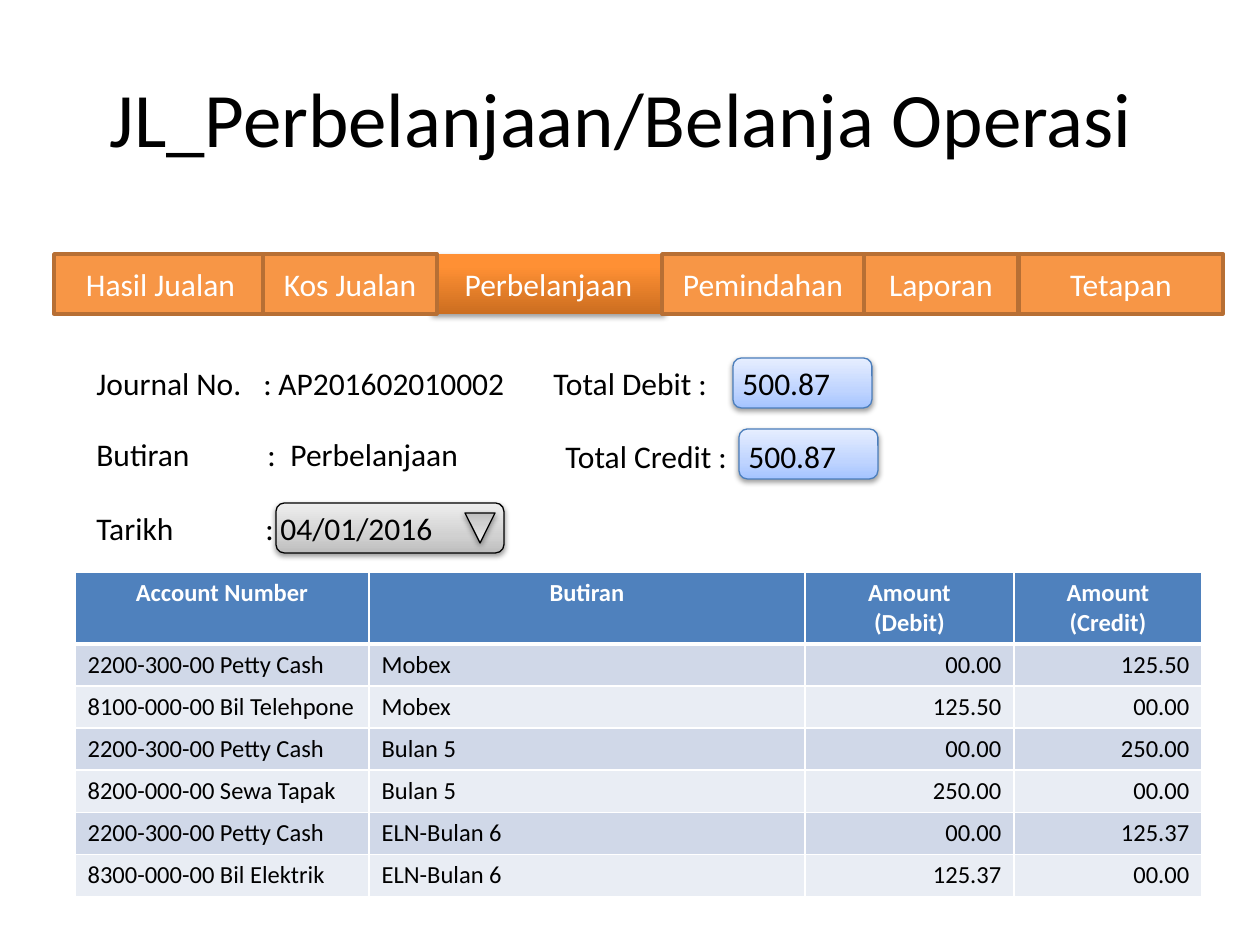
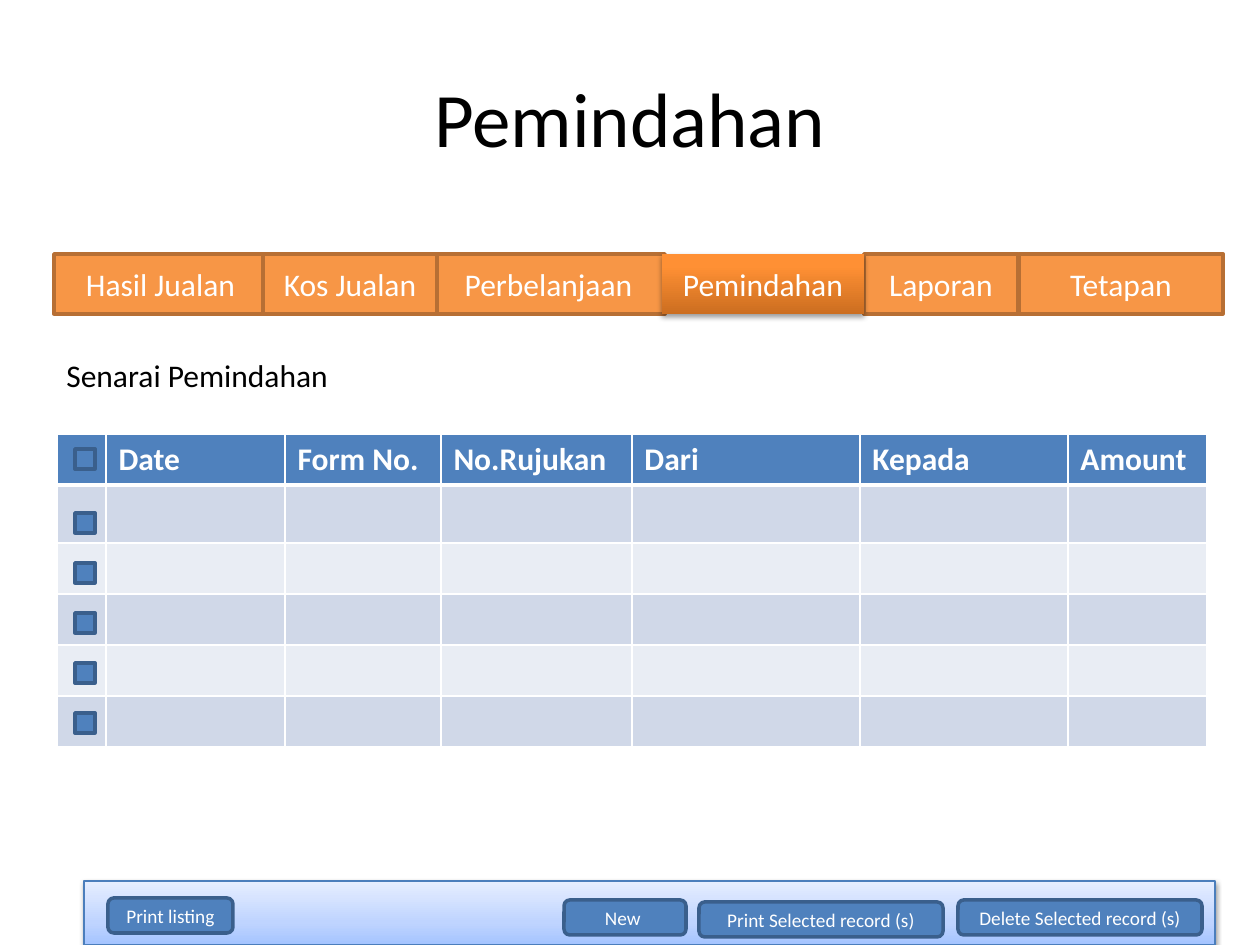
import pptx
import pptx.util
import pptx.dml.color
import pptx.enum.shapes
import pptx.enum.text
import pptx.oxml.ns
from dataclasses import dataclass
from lxml import etree

SHAPE = pptx.enum.shapes.MSO_SHAPE
ALIGN = pptx.enum.text.PP_ALIGN
ANCHOR = pptx.enum.text.MSO_ANCHOR
LEFT, CENTER, RIGHT = ALIGN.LEFT, ALIGN.CENTER, ALIGN.RIGHT
qn = pptx.oxml.ns.qn
PX = 914400 / 126


@dataclass(frozen=True)
class Theme:
    """Colours, gradients and type sizes shared by the slides."""
    font: str = "Calibri"
    title: int = 44
    body: int = 18
    cell: int = 14
    button: int = 11
    black: str = "000000"
    white: str = "FFFFFF"
    blue: str = "4F81BD"
    blue_edge: str = "3A5F8C"
    orange: str = "F79646"
    orange_edge: str = "B76F34"
    pale_edge: str = "4B7EBC"
    bands: tuple = ("D0D8E8", "E9EDF4")
    pale_blue: tuple = ((0, "A4C4FF"), (35, "BFD4FF"), (100, "E6EEFF"))
    grey: tuple = ((0, "BDBDBD"), (35, "D1D1D1"), (100, "EEEEEE"))
    active: tuple = ((0, "CC6E20"), (80, "FF9034"), (100, "FF9136"))


T = Theme()
TABS = [("Hasil Jualan", 0, 213), ("Perbelanjaan", 378, 233), ("Laporan", 810, 154),
        ("Tetapan", 965, 204), ("Pemindahan", 608, 202), ("Kos Jualan", 209, 174)]
BUTTONS = [("Delete Selected record (s)", 874, 19, 244), ("Print listing", 24, 17, 125),
           ("Print Selected record (s)", 615, 21, 244), ("New ", 480, 19, 122)]
JOURNAL = [
    ("Account Number", "Butiran", "Amount\n(Debit)", "Amount\n(Credit)"),
    ("2200-300-00 Petty Cash", "Mobex", "00.00", "125.50"),
    ("8100-000-00 Bil Telehpone", "Mobex", "125.50", "00.00"),
    ("2200-300-00 Petty Cash", "Bulan 5", "00.00", "250.00"),
    ("8200-000-00 Sewa Tapak", "Bulan 5", "250.00", "00.00"),
    ("2200-300-00 Petty Cash", "ELN-Bulan 6", "00.00", "125.37"),
    ("8300-000-00 Bil Elektrik", "ELN-Bulan 6", "125.37", "00.00"),
]
TRANSFERS = [("", "Date", "Form No.", "No.Rujukan", "Dari", "Kepada", "Amount")] + [("",) * 7] * 5


def emu(*px):
    """Turn px lengths into EMU."""
    return [round(v * PX) for v in px]


def rgb(code):
    """Return the colour object for a hex code."""
    return pptx.dml.color.RGBColor.from_string(code)


def add_xml(parent, tag, **attrs):
    """Append a DrawingML element with the given attributes."""
    return etree.SubElement(parent, qn(tag), {k: str(v) for k, v in attrs.items()})


def write(tf, text, size, color=T.black, align=LEFT, bold=False, stops=()):
    """Fill a text frame with uniformly styled paragraphs and tab stops."""
    tf.text = text
    for p in tf.paragraphs:
        p.alignment = align
        fmt = {"name": T.font, "size": pptx.util.Pt(size), "bold": bold}
        for key, value in fmt.items():
            setattr(p.font, key, value)
        for r in p.runs:
            for key, value in fmt.items():
                setattr(r.font, key, value)
            r.font.color.rgb = rgb(color)
        if stops:
            tabs = add_xml(p._p.get_or_add_pPr(), "a:tabLst")
            for pos in emu(*stops):
                add_xml(tabs, "a:tab", pos=pos, algn="l")


def add_text(shapes, box, text, size=T.body, align=LEFT, anchor=ANCHOR.TOP, stops=()):
    """Add a text box."""
    tf = shapes.add_textbox(*emu(*box)).text_frame
    for key, value in {"word_wrap": True, "vertical_anchor": anchor}.items():
        setattr(tf, key, value)
    write(tf, text, size, align=align, stops=stops)


def add_flat(shapes, kind, box, fill, edge, text="", size=T.body):
    """Add a solid outlined shape with optional centred text."""
    sp = shapes.add_shape(kind, *emu(*box))
    sp.shadow.inherit = False
    sp.fill.solid()
    sp.fill.fore_color.rgb = rgb(fill)
    sp.line.color.rgb = rgb(edge)
    sp.line.width = pptx.util.Pt(2)
    if text:
        sp.text_frame.vertical_anchor = ANCHOR.MIDDLE
        write(sp.text_frame, text, size, T.white, CENTER)


def add_glossy(shapes, kind, box, stops, edge=None, text="", rotation=0):
    """Add a shape with a vertical gradient and a soft shadow."""
    sp = shapes.add_shape(kind, *emu(*box))
    sp.rotation = rotation
    sp.fill.gradient()
    sp.fill.gradient_angle = 90
    gs_list = sp._element.spPr.find(".//" + qn("a:gsLst"))
    for gs in list(gs_list):
        gs_list.remove(gs)
    for pos, color in stops:
        add_xml(add_xml(gs_list, "a:gs", pos=pos * 1000), "a:srgbClr", val=color)
    if edge:
        sp.line.color.rgb = rgb(edge)
        sp.line.width = pptx.util.Pt(0.75)
    else:
        sp.line.fill.background()
    sp.shadow.inherit = False
    shadow = add_xml(sp._element.spPr.find(qn("a:effectLst")), "a:outerShdw",
                     blurRad=40000, dist=20000, dir=5400000, rotWithShape=0)
    add_xml(add_xml(shadow, "a:srgbClr", val=T.black), "a:alpha", val=38000)
    if text:
        sp.text_frame.vertical_anchor = ANCHOR.MIDDLE
        write(sp.text_frame, text, T.body, T.white, CENTER)


def add_borders(cell, top, bottom):
    """Draw white borders of the given top and bottom widths on a cell."""
    for side, width in {"L": 1, "R": 1, "T": top, "B": bottom}.items():
        ln = add_xml(cell._tc.get_or_add_tcPr(), "a:ln" + side, w=width * 12700)
        add_xml(add_xml(ln, "a:solidFill"), "a:srgbClr", val=T.white)


def add_grid(shapes, box, rows, widths, heights, size, head_align, aligns):
    """Add a table with a blue header and banded rows."""
    table = shapes.add_table(len(rows), len(widths), *emu(*box)).table
    for col, width in zip(table.columns, emu(*widths)):
        col.width = width
    for row, height in zip(table.rows, emu(*heights)):
        row.height = height
    for i, values in enumerate(rows):
        head = i == 0
        for j, value in enumerate(values):
            cell = table.cell(i, j)
            add_borders(cell, 3 if i == 1 else 1, 3 if head else 1)
            cell.fill.solid()
            cell.fill.fore_color.rgb = rgb(T.blue if head else T.bands[(i - 1) % 2])
            write(cell.text_frame, value, size, T.white if head else T.black,
                  head_align if head else aligns[j], head)


def add_header(s, title, current):
    """Add the title and the tab bar with the current tab raised."""
    add_text(s.shapes, (63, 38, 1134, 158), title, T.title, CENTER, ANCHOR.MIDDLE)
    left, top = 54, 254
    bar = s.shapes.add_group_shape().shapes
    for name, dx, width in TABS:
        box = (left + dx, top, width, 60)
        if name == current:
            add_glossy(bar, SHAPE.RECTANGLE, box, T.active, text=name)
        else:
            add_flat(bar, SHAPE.RECTANGLE, box, T.orange, T.orange_edge, name)


def add_journal_form(s, x, y):
    """Add the journal fields and totals."""
    sh = s.shapes
    for dx, dy in ((649, 0), (655, 71)):
        add_glossy(sh, SHAPE.ROUNDED_RECTANGLE, (x + dx, y + dy, 139, 50), T.pale_blue, T.pale_edge)
    add_glossy(sh, SHAPE.ROUNDED_RECTANGLE, (x + 192, y + 145, 228, 50), T.grey, T.black)
    fields = [("Journal No.\t:\tAP201602010002", 0, 0, (167, 182)),
              ("Butiran\t:\tPerbelanjaan", 0, 71, (171, 194)),
              ("Tarikh\t:\t04/01/2016", 0, 145, (169, 184)),
              ("Total Debit :\t500.87", 457, 0, (189,)),
              ("Total Credit :\t500.87", 469, 73, (183,))]
    for text, dx, dy, stops in fields:
        add_text(sh, (x + dx, y + dy, 445, 50), text, stops=stops)
    add_glossy(sh, SHAPE.ISOSCELES_TRIANGLE, (x + 381, y + 155, 30, 30), T.grey, T.black, rotation=180)


def add_transfer_list(s, x, y):
    """Add the transfer table with a check box in each row."""
    widths = (49, 179, 156, 191, 228, 208, 139)
    heights = (51, 58, 51, 51, 51, 51)
    add_grid(s.shapes, (x, y, sum(widths), sum(heights)), TRANSFERS, widths, heights,
             T.body, LEFT, [LEFT] * 7)
    for dy in (15, *range(79, 280, 50)):
        add_flat(s.shapes, SHAPE.RECTANGLE, (x + 18, y + dy, 20, 20), T.blue, T.blue_edge)


def add_action_bar(s, x, y):
    """Add the bottom bar with its buttons."""
    add_glossy(s.shapes, SHAPE.RECTANGLE, (x, y, 1131, 64), T.pale_blue, T.pale_edge)
    for name, dx, dy, width in BUTTONS:
        add_flat(s.shapes, SHAPE.ROUNDED_RECTANGLE, (x + dx, y + dy, width, 35),
                 T.blue, T.blue_edge, name, T.button)


def build_journal(s):
    """Build the expense journal slide."""
    add_journal_form(s, 84, 358)
    widths, heights = (294, 436, 209, 188), (72,) + (42,) * 6
    add_grid(s.shapes, (75, 572, sum(widths), sum(heights)), JOURNAL, widths, heights,
             T.cell, CENTER, (LEFT, LEFT, RIGHT, RIGHT))
    add_header(s, "JL_Perbelanjaan/Belanja Operasi ", "Perbelanjaan")


def build_transfers(s):
    """Build the transfer list slide."""
    add_action_bar(s, 84, 881)
    add_transfer_list(s, 57, 434)
    add_text(s.shapes, (54, 350, 300, 50), "Senarai Pemindahan")
    add_header(s, "Pemindahan", "Pemindahan")


def main():
    """Build and save the presentation."""
    prs = pptx.Presentation()
    prs.slide_width, prs.slide_height = emu(1260, 945)
    for build in (build_journal, build_transfers):
        build(prs.slides.add_slide(prs.slide_layouts[6]))
    prs.save("out.pptx")


if __name__ == "__main__":
    main()
